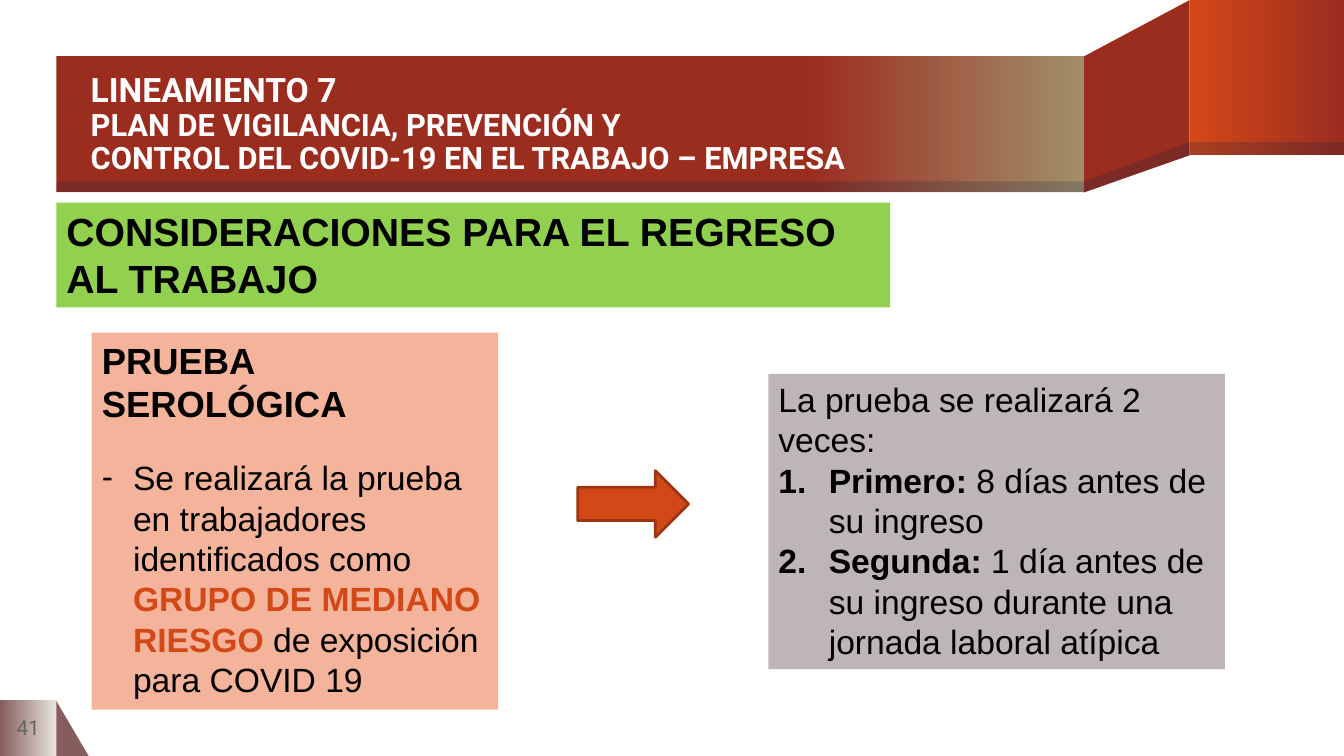
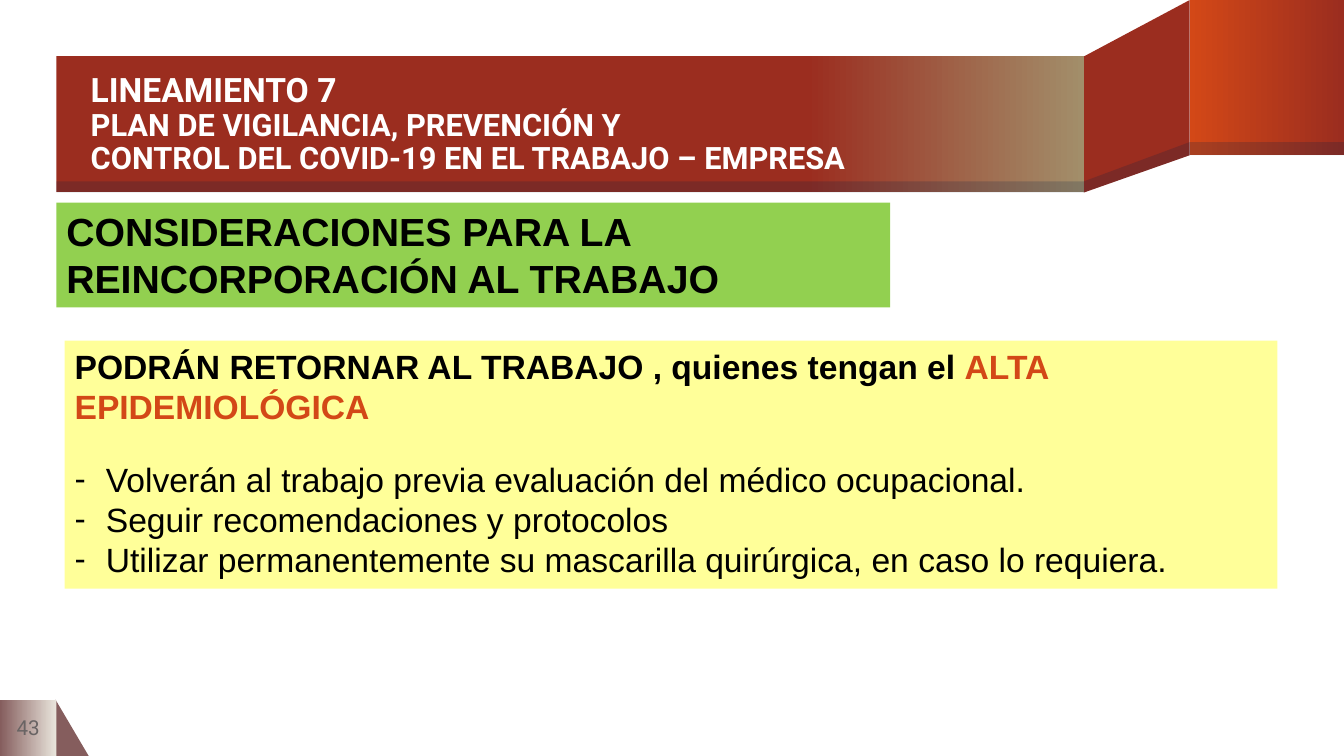
from dataclasses import dataclass

from lxml.etree import SubElement
from pptx import Presentation
from pptx.dml.color import RGBColor as Rgb
from pptx.enum.shapes import MSO_SHAPE as Kind
from pptx.enum.text import MSO_ANCHOR as Anchor, MSO_AUTO_SIZE as Fit, PP_ALIGN as Align
from pptx.oxml.ns import qn
from pptx.util import Inches, Pt


@dataclass(frozen=True)
class Theme:
    """Colours, fonts and type sizes of the deck."""
    brick: str = "9B2D1F"
    flame: str = "D34817"
    edge: str = "9C3511"
    sand: str = "A28E6A"
    plum: str = "855D5D"
    cream: str = "E9E5DC"
    shade: str = "001F46"
    lime: str = "92D050"
    peach: str = "F4B39B"
    mauve: str = "BDB5B6"
    lemon: str = "FFFF99"
    gray: str = "696464"
    black: str = "000000"
    white: str = "FFFFFF"
    font: str = "Arial"
    head: str = "Roboto"
    top: float = 24
    sub: float = 22
    band: float = 28
    lead: float = 26
    body: float = 24
    num: float = 14.7
    gap: float = 23


T = Theme()
TITLE = [
    [("LINEAMIENTO 7", {"size": T.top})],
    [("PLAN DE VIGILANCIA, PREVENCIÓN Y", {})],
    [("CONTROL DEL COVID-19 EN EL TRABAJO – EMPRESA", {})],
]


def place(shape, x, y, w, h):
    """Move a shape to a box given in inches."""
    shape.left, shape.top, shape.width, shape.height = map(Inches, (x, y, w, h))


def paint(shape, color, end=None, start=0, alpha=None):
    """Fill a shape plainly, with a gradient or with a see-through colour."""
    fill = shape.fill
    if end:
        fill.gradient()
        fill.gradient_angle = 0
        for stop, tone, spot in zip(fill.gradient_stops, (color, end), (start, 1)):
            stop.color.rgb = Rgb.from_string(tone)
            stop.position = spot
    else:
        fill.solid()
        fill.fore_color.rgb = Rgb.from_string(color)
    if alpha:
        tone = shape.element.spPr.find(".//" + qn("a:srgbClr"))
        SubElement(tone, qn("a:alpha"), val=str(alpha * 1000))


def block(slide, kind, box, color, **look):
    """Add a flat preset shape without a line."""
    shape = slide.shapes.add_shape(kind, *map(Inches, box))
    shape.shadow.inherit = False
    shape.line.fill.background()
    paint(shape, color, **look)
    return shape


def plane(slide, points, color, **look):
    """Add a flat closed outline through the points."""
    spots = [(Inches(x), Inches(y)) for x, y in points]
    pen = slide.shapes.build_freeform(*spots[0])
    pen.add_line_segments(spots[1:], close=True)
    shape = pen.convert_to_shape()
    shape.shadow.inherit = False
    shape.line.fill.background()
    paint(shape, color, **look)


def mark(para, bullet, indent):
    """Set the bullet and hanging indent of a paragraph."""
    props = para._p.get_or_add_pPr()
    props.set("marL", str(Inches(indent)))
    props.set("indent", str(-Inches(indent)))
    if bullet == "1.":
        SubElement(props, qn("a:buAutoNum"), type="arabicPeriod")
    elif bullet:
        SubElement(props, qn("a:buChar"), char=bullet)
    else:
        SubElement(props, qn("a:buNone"))


def write(shape, paras, size=T.body, font=T.font, color=T.black, bold=False,
          align=Align.LEFT, anchor=Anchor.TOP, space=1, inset=None,
          bullet=None, indent=0, gap=0, lead=0):
    """Write paragraphs of (text, format) runs; the first lead ones have no bullet."""
    frame = shape.text_frame
    frame.word_wrap = True
    frame.auto_size = Fit.NONE
    frame.vertical_anchor = anchor
    if inset is not None:
        frame.margin_left = frame.margin_right = Inches(inset)
        frame.margin_top = frame.margin_bottom = Inches(inset)
    for n, runs in enumerate(paras):
        para = frame.add_paragraph() if n else frame.paragraphs[0]
        para.alignment = align
        para.line_spacing = space
        para.space_before = Pt(gap if n and n == lead else 0)
        item = n >= lead
        mark(para, bullet if item else None, indent if item else 0)
        for text, own in runs:
            run = para.add_run()
            run.text = text
            look = run.font
            look.name = own.get("font", font)
            look.size = Pt(own.get("size", size))
            look.bold = own.get("bold", bold)
            look.color.rgb = Rgb.from_string(own.get("color", color))


def ribbon(slide, x, y, w, h):
    """Draw the folded title ribbon with its dark lower rim."""
    fold, flap, end = x + w - 2.58, x + w - 1.53, x + w
    low, drop, rim = y + h, 0.37, 0.11
    base = low - drop
    plane(slide, [(flap, y), (fold, y + 0.56), (fold, low), (flap, base)], T.brick)
    block(slide, Kind.RECTANGLE, (flap, y, end - flap, h - drop), T.flame, end=T.brick)
    block(slide, Kind.RECTANGLE, (x, y + 0.56, fold - x, h - 0.56), T.brick,
          end=T.sand, start=0.73)
    plane(slide, [(flap, base - 0.13), (fold, low - rim), (fold, low), (flap, base)],
          T.shade, alpha=20)
    block(slide, Kind.RECTANGLE, (flap, base - 0.13, end - flap, 0.13), T.shade, alpha=20)
    block(slide, Kind.RECTANGLE, (x, low - rim, fold - x, rim), T.shade, alpha=20)


def corner(slide, x, y, side):
    """Draw the folded tab behind the page number."""
    block(slide, Kind.RIGHT_TRIANGLE, (x + side - 0.01, y, 0.33, side), T.plum)
    block(slide, Kind.RECTANGLE, (x, y, side, side), T.plum, end=T.cream)


def share(deck, slide):
    """Draw the common art and move it to the slide master."""
    master = deck.slide_master
    place(master.placeholders[0], 0.9, 0.57, 9.85, 1.34)
    corner(slide, 0, 6.94, 0.56)
    ribbon(slide, 0.56, 0, 12.77, 1.91)
    art = [s for s in slide.shapes if not s.is_placeholder]
    for n, shape in enumerate(art):
        shape.element.nvSpPr.cNvPr.set("id", str(101 + n))
        master.shapes.element.insert(2 + n, shape.element)


def header(slide, number, topic):
    """Fill the title, page number and green topic band."""
    write(slide.shapes.title, TITLE, size=T.sub, font=T.head, color=T.white,
          bold=True, anchor=Anchor.MIDDLE, space=0.9, inset=0)
    page = slide.shapes.add_textbox(*map(Inches, (0, 6.94, 0.56, 0.56)))
    write(page, [[(number, {})]], size=T.num, font=T.head, color=T.gray,
          align=Align.CENTER, anchor=Anchor.MIDDLE, inset=0)
    band = block(slide, Kind.RECTANGLE, (0.56, 2.01, 8.27, 1.04), T.lime)
    write(band, [[(topic, {})]], size=T.band, bold=True)


def panel(holder, box, color, paras, **look):
    """Turn a body placeholder into a coloured list box."""
    place(holder, *box)
    paint(holder, color)
    write(holder, paras, **look)


def testing(slide, x, y, w, h):
    """Lay out the test panel, the arrow and the schedule panel."""
    left, right = slide.placeholders[1], slide.placeholders[2]
    strong = {"bold": True}
    panel(left, (x, y, 4.03, h), T.peach, [
        [("PRUEBA SEROLÓGICA", {"size": T.lead, "bold": True})],
        [("Se realizará la prueba en trabajadores identificados como ", {}),
         ("GRUPO DE MEDIANO RIESGO", {"color": T.flame, "bold": True}),
         (" de exposición para COVID 19", {})],
    ], bullet="-", indent=0.31, lead=1, gap=T.gap)
    panel(right, (x + w - 4.53, y + 0.41, 4.53, 2.93), T.mauve, [
        [("La prueba se realizará 2 veces:", {})],
        [("Primero: ", strong), ("8 días antes de su ingreso", {})],
        [("Segunda: ", strong),
         ("1 día antes de su ingreso durante una jornada laboral atípica", {})],
    ], bullet="1.", indent=0.5, lead=1)
    arrow = block(slide, Kind.RIGHT_ARROW, (x + 4.82, y + 1.37, 1.1, 0.66), T.flame)
    arrow.line.color.rgb = Rgb.from_string(T.edge)
    arrow.line.width = Pt(2)


def rejoin(slide, x, y, w, h):
    """Lay out the panel on going back to work."""
    items = (
        "Volverán al trabajo previa evaluación del médico ocupacional.",
        "Seguir recomendaciones y protocolos",
        "Utilizar permanentemente su mascarilla quirúrgica, en caso lo requiera.",
    )
    lead = [("PODRÁN RETORNAR AL TRABAJO , quienes tengan el ", {"bold": True}),
            ("ALTA EPIDEMIOLÓGICA", {"bold": True, "color": T.flame})]
    panel(slide.placeholders[1], (x, y, w, h), T.lemon,
          [lead] + [[(item, {})] for item in items],
          bullet="-", indent=0.31, lead=1, gap=T.gap)


def main():
    """Build and save the deck."""
    deck = Presentation()
    deck.slide_width, deck.slide_height = Inches(13.33), Inches(7.5)
    first = deck.slides.add_slide(deck.slide_layouts.get_by_name("Two Content"))
    share(deck, first)
    header(first, "41", "CONSIDERACIONES PARA EL REGRESO AL TRABAJO")
    testing(first, 0.91, 3.3, 11.24, 3.74)
    second = deck.slides.add_slide(deck.slide_layouts.get_by_name("Title and Content"))
    header(second, "43", "CONSIDERACIONES PARA LA REINCORPORACIÓN AL TRABAJO")
    rejoin(second, 0.64, 3.38, 12.03, 2.46)
    deck.save("out.pptx")


if __name__ == "__main__":
    main()
